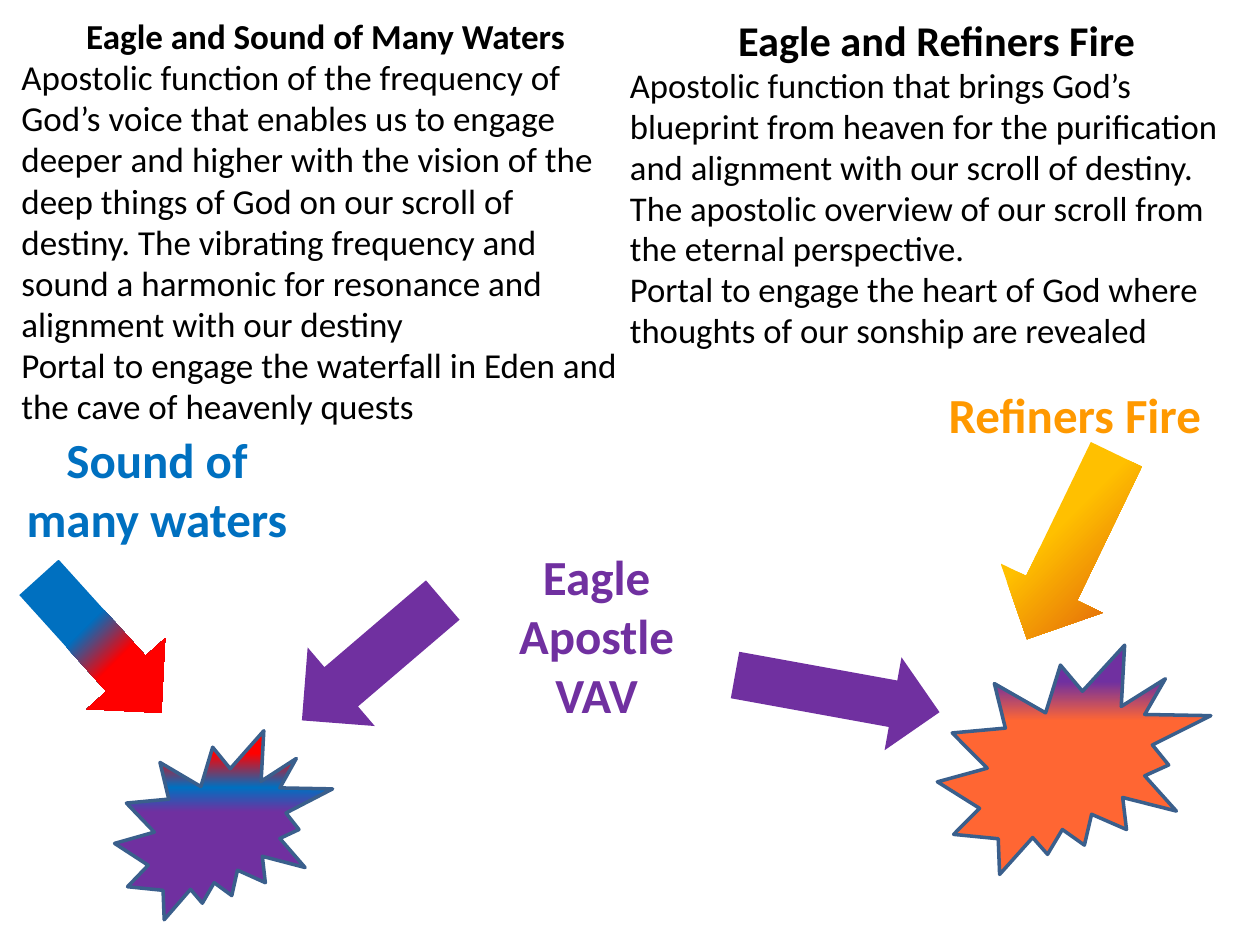
from dataclasses import dataclass

from lxml import etree
from pptx import Presentation
from pptx.dml.color import RGBColor
from pptx.enum import shapes, text
from pptx.oxml import ns
from pptx.util import Inches, Pt


@dataclass(frozen=True)
class Theme:
    font: str = "Calibri"
    ink: str = "000000"
    eagle: str = "7030A0"
    water: str = "0070C0"
    red: str = "FF0000"
    fire: str = "FF9900"
    ember: str = "FF6633"
    amber: str = "E46C0A"
    gold: str = "FFC000"
    outline: str = "3A5F8C"
    label_size: float = 28
    outline_width: float = 2
    body_spacing: float = 0.98


THEME = Theme()


@dataclass(frozen=True)
class Box:
    left: float
    top: float
    width: float
    height: float

    def lengths(self):
        return [Inches(v) for v in (self.left, self.top, self.width, self.height)]


@dataclass(frozen=True)
class Gradient:
    """Stops are (percent, colour); a radial one spreads from the lower right corner."""
    stops: tuple[tuple[int, str], ...]
    radial: bool = False


@dataclass(frozen=True)
class Label:
    box: Box
    lines: tuple[str, ...]
    color: str


@dataclass(frozen=True)
class Passage:
    box: Box
    heading: str
    heading_size: float
    body: tuple[str, ...]
    body_size: float


@dataclass(frozen=True)
class Arrow:
    box: Box
    rotation: float
    fill: str | Gradient


@dataclass(frozen=True)
class Burst:
    box: Box
    fill: Gradient


LABELS = (
    Label(Box(4.06, 4.34, 1.35, 1.8), ("Eagle", "Apostle", "VAV"), THEME.eagle),
    Label(Box(7.28, 3.05, 2.5, 0.46), ("Refiners Fire",), THEME.fire),
    Label(Box(0.17, 3.41, 2.15, 0.86), ("Sound of many waters",), THEME.water),
)

PASSAGES = (
    Passage(
        Box(5, 0.13, 4.87, 2.94), "Eagle and Refiners Fire", 24.2,
        ("Apostolic function that brings God’s blueprint from heaven for the "
         "purification and alignment with our scroll of destiny. The apostolic "
         "overview of our scroll from the eternal perspective.",
         "Portal to engage the heart of God where thoughts of our sonship are revealed"),
        19.8),
    Passage(
        Box(0.17, 0.13, 4.83, 3.28), "Eagle and Sound of Many Waters", 20,
        ("Apostolic function of the frequency of God’s voice that enables us to "
         "engage deeper and higher with the vision of the deep things of God on our "
         "scroll of destiny. The vibrating frequency and sound a harmonic for "
         "resonance and alignment with our destiny",
         "Portal to engage the waterfall in Eden and the cave of heavenly quests"),
        20),
)

ARROWS = (
    Arrow(Box(5.82, 5.13, 1.65, 0.75), 10.3, THEME.eagle),
    Arrow(Box(7.69, 3.89, 1.63, 0.9), 115.8,
          Gradient(((22, THEME.amber), (58, THEME.gold)), radial=True)),
    Arrow(Box(2.22, 4.83, 1.47, 0.82), 139.5, THEME.eagle),
    Arrow(Box(0.07, 4.7, 1.45, 0.84), 47.9,
          Gradient(((42, THEME.red), (58, THEME.water)), radial=True)),
)

BURSTS = (
    Burst(Box(7.44, 5.12, 2.17, 1.82),
          Gradient(((16, THEME.eagle), (33, THEME.ember)))),
    Burst(Box(0.91, 5.8, 1.73, 1.5),
          Gradient(((12, THEME.red), (30, THEME.water), (43, THEME.eagle)))),
)


def add_frame(slide, box: Box):
    frame = slide.shapes.add_textbox(*box.lengths()).text_frame
    frame.word_wrap = True
    frame.margin_left = frame.margin_right = 0
    frame.margin_top = frame.margin_bottom = 0
    return frame


def write(paragraph, words: str, *, size: float, color: str = THEME.ink,
          bold: bool = False, centered: bool = False, spacing: float | None = None) -> None:
    align = text.PP_ALIGN
    paragraph.alignment = align.CENTER if centered else align.LEFT
    paragraph.line_spacing = spacing
    run = paragraph.add_run()
    run.text = words
    run.font.name = THEME.font
    run.font.size = Pt(size)
    run.font.bold = bold
    run.font.color.rgb = RGBColor.from_string(color)


def draw_label(slide, label: Label) -> None:
    frame = add_frame(slide, label.box)
    for i, line in enumerate(label.lines):
        paragraph = frame.add_paragraph() if i else frame.paragraphs[0]
        write(paragraph, line, size=THEME.label_size, color=label.color,
              bold=True, centered=True)


def draw_passage(slide, passage: Passage) -> None:
    frame = add_frame(slide, passage.box)
    write(frame.paragraphs[0], passage.heading, size=passage.heading_size,
          bold=True, centered=True, spacing=THEME.body_spacing)
    for words in passage.body:
        write(frame.add_paragraph(), words, size=passage.body_size,
              spacing=THEME.body_spacing)


def apply_gradient(shape, gradient: Gradient) -> None:
    """Replace the fill with stops at exact places, fixed to the page."""
    shape.fill.background()
    blank = shape._element.spPr.find(ns.qn("a:noFill"))
    fill = etree.Element(ns.qn("a:gradFill"), rotWithShape="0")
    stops = etree.SubElement(fill, ns.qn("a:gsLst"))
    for percent, color in gradient.stops:
        stop = etree.SubElement(stops, ns.qn("a:gs"), pos=str(percent * 1000))
        etree.SubElement(stop, ns.qn("a:srgbClr"), val=color)
    if gradient.radial:
        spread = etree.SubElement(fill, ns.qn("a:path"), {"path": "circle"})
        etree.SubElement(spread, ns.qn("a:fillToRect"), l="100000", t="100000")
    else:
        etree.SubElement(fill, ns.qn("a:lin"), ang=str(90 * 60000), scaled="0")
    blank.getparent().replace(blank, fill)


def add_filled(slide, kind, box: Box, fill: str | Gradient):
    shape = slide.shapes.add_shape(kind, *box.lengths())
    shape.shadow.inherit = False
    if isinstance(fill, Gradient):
        apply_gradient(shape, fill)
    else:
        shape.fill.solid()
        shape.fill.fore_color.rgb = RGBColor.from_string(fill)
    return shape


def draw_arrow(slide, arrow: Arrow) -> None:
    shape = add_filled(slide, shapes.MSO_SHAPE.RIGHT_ARROW, arrow.box, arrow.fill)
    shape.rotation = arrow.rotation
    shape.line.fill.background()


def draw_burst(slide, burst: Burst) -> None:
    shape = add_filled(slide, shapes.MSO_SHAPE.EXPLOSION2, burst.box, burst.fill)
    shape.line.color.rgb = RGBColor.from_string(THEME.outline)
    shape.line.width = Pt(THEME.outline_width)


def main() -> None:
    deck = Presentation()
    deck.slide_width, deck.slide_height = Inches(10), Inches(7.5)
    slide = deck.slides.add_slide(deck.slide_layouts[6])
    for items, draw in ((LABELS, draw_label), (PASSAGES, draw_passage),
                        (ARROWS, draw_arrow), (BURSTS, draw_burst)):
        for item in items:
            draw(slide, item)
    deck.save("out.pptx")


if __name__ == "__main__":
    main()
